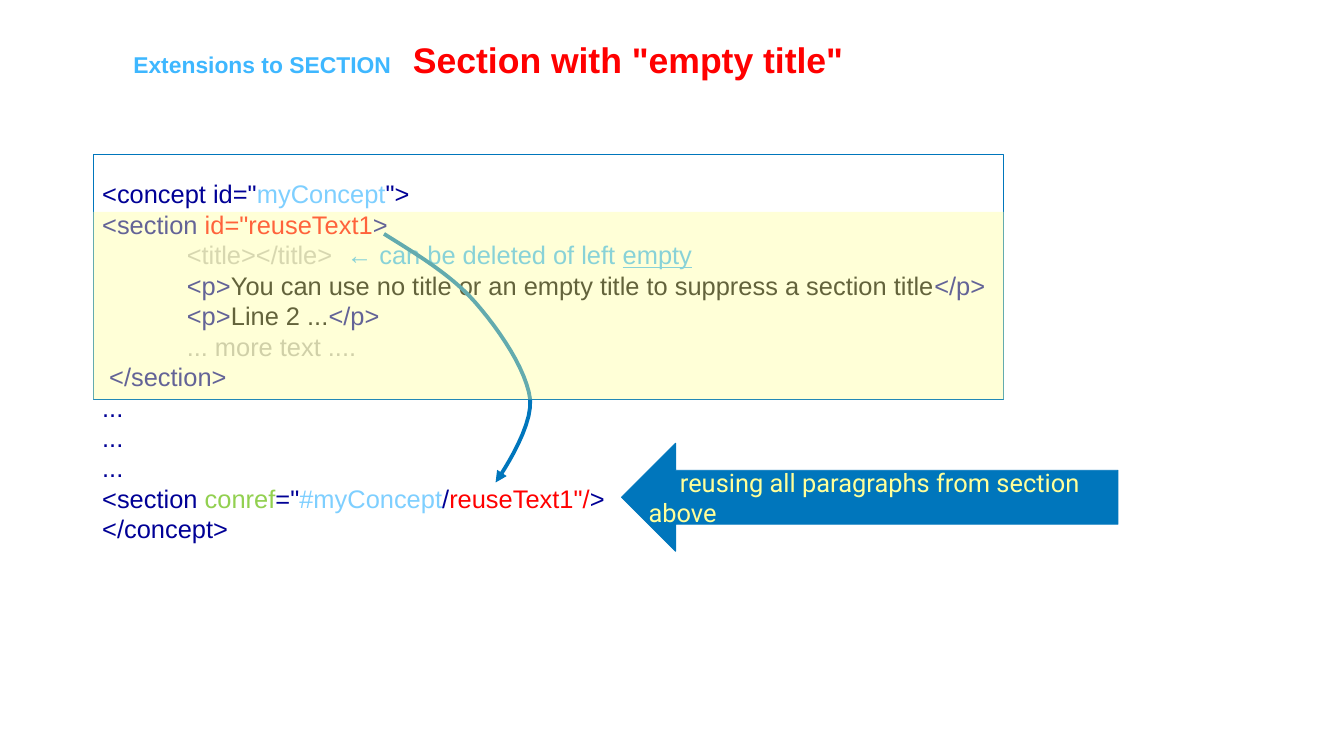
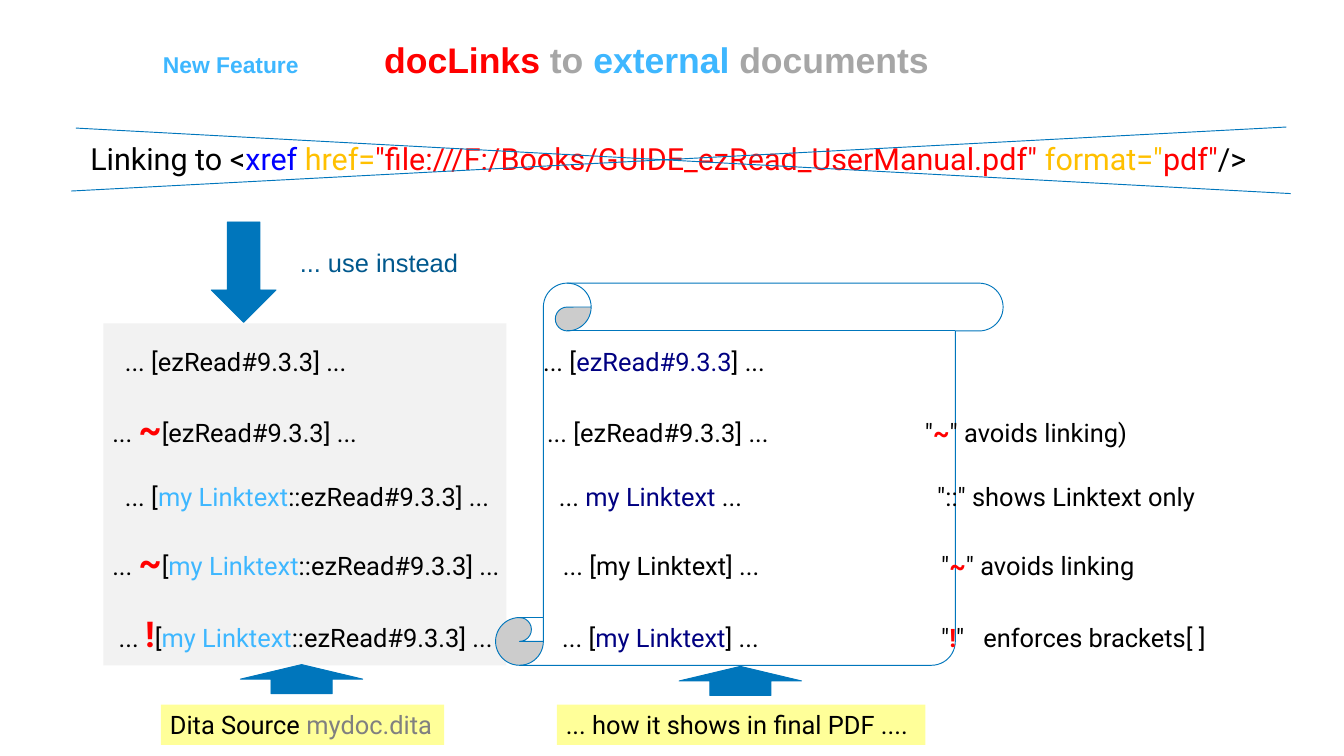
from dataclasses import dataclass

from lxml.etree import SubElement
from pptx import Presentation
from pptx.dml.color import RGBColor
from pptx.enum.shapes import MSO_CONNECTOR, MSO_SHAPE
from pptx.enum.text import MSO_ANCHOR, MSO_AUTO_SIZE, PP_ALIGN
from pptx.oxml.ns import qn
from pptx.util import Cm, Pt


@dataclass(frozen=True)
class Theme:
    blue: str = "0076BC"
    sky: str = "3EB7FF"
    pale_sky: str = "7ECFFF"
    deep_blue: str = "00588D"
    navy: str = "000096"
    link: str = "000081"
    element: str = "0000FF"
    red: str = "FF0000"
    gold: str = "FFC000"
    green: str = "92D050"
    yellow: str = "FFFF99"
    black: str = "000000"
    white: str = "FFFFFF"
    panel: str = "F2F2F2"
    title_gray: str = "A6A6A6"
    dark_gray: str = "808080"
    faint: str = "BFBFBF"
    faded: str = "B3B3B3"
    sans: str = "Arial"
    roboto: str = "Roboto"
    kicker: int = 18
    body: int = 20
    large: int = 24
    title: int = 28
    hairline: float = 0.75
    curve: int = 3


THEME = Theme()


@dataclass(frozen=True)
class Box:
    """A rectangle in centimetres."""
    left: float
    top: float
    width: float
    height: float

    def inner(self, left, top, width, height):
        return Box(self.left + left, self.top + top, width, height)

    def point(self, x, y):
        return Cm(self.left + x), Cm(self.top + y)

    @property
    def lengths(self):
        return [Cm(value) for value in (self.left, self.top, self.width, self.height)]


@dataclass(frozen=True)
class Piece:
    text: str
    color: str = THEME.black
    size: int = THEME.body
    bold: bool = False
    underline: bool = False


def rgb(color):
    return RGBColor.from_string(color)


def add_pieces(paragraph, pieces, font):
    for piece in pieces:
        run = paragraph.add_run()
        run.text = piece.text
        run.font.name = font
        run.font.size = Pt(piece.size)
        run.font.bold = piece.bold
        run.font.underline = piece.underline
        run.font.color.rgb = rgb(piece.color)


def add_tab_stops(paragraph, stops):
    tab_list = SubElement(paragraph._p.get_or_add_pPr(), qn("a:tabLst"))
    for stop in stops:
        SubElement(tab_list, qn("a:tab"), pos=str(Cm(stop)), algn="l")


def next_paragraph(frame, index):
    return frame.add_paragraph() if index else frame.paragraphs[0]


def add_text(slide, box, lines, font, line_height=None):
    frame = slide.shapes.add_textbox(*box.lengths).text_frame
    frame.word_wrap = True
    for index, pieces in enumerate(lines):
        paragraph = next_paragraph(frame, index)
        if line_height:
            paragraph.line_spacing = Pt(line_height)
        add_pieces(paragraph, pieces, font)


def style_line(line, width=THEME.hairline):
    line.color.rgb = rgb(THEME.blue)
    line.width = Pt(width)


def add_panel(slide, kind, box, fill=None, outlined=False):
    shape = slide.shapes.add_shape(kind, *box.lengths)
    shape.shadow.inherit = False
    if fill:
        shape.fill.solid()
        shape.fill.fore_color.rgb = rgb(fill)
    else:
        shape.fill.background()
    if outlined:
        style_line(shape.line)
    else:
        shape.line.fill.background()
    return shape


def add_block_arrow(slide, kind, box):
    return add_panel(slide, kind, box, THEME.blue, outlined=True)


def add_title_slide(presentation, box, kicker, headline, headline_start):
    """Add a slide whose title is a kicker, a tab and a headline."""
    slide = presentation.slides.add_slide(presentation.slide_layouts[5])
    title = slide.shapes.title
    title.left, title.top, title.width, title.height = box.lengths
    frame = title.text_frame
    frame.auto_size = MSO_AUTO_SIZE.NONE
    frame.vertical_anchor = MSO_ANCHOR.BOTTOM
    frame.margin_bottom = Cm(0.25)
    paragraph = frame.paragraphs[0]
    add_tab_stops(paragraph, [headline_start])
    paragraph.alignment = PP_ALIGN.LEFT
    kicker_pieces = [Piece(kicker + "\t", THEME.sky, THEME.kicker, True)]
    headline_pieces = [Piece(text, color, THEME.title, True) for text, color in headline]
    add_pieces(paragraph, kicker_pieces + headline_pieces, THEME.sans)
    return slide


def bezier(start, first, second, end, steps=12):
    for step in range(1, steps + 1):
        t = step / steps
        weights = ((1 - t) ** 3, 3 * t * (1 - t) ** 2, 3 * t * t * (1 - t), t ** 3)
        yield tuple(sum(weight * point[axis] for weight, point
                        in zip(weights, (start, first, second, end))) for axis in (0, 1))


def add_reuse_curve(slide, box):
    """Draw the curved arrow from the section id to its reuse."""
    knots = [(0, 0), (0.94, 0.59), (1.88, 1.15), (2.54, 1.91), (3.22, 2.69),
             (3.96, 3.79), (4.06, 4.6), (4.14, 5.44), (3.1, 6.91), (3.1, 6.91)]
    points = [point for index in range(0, len(knots) - 1, 3)
              for point in bezier(*knots[index:index + 4])]
    builder = slide.shapes.build_freeform(*box.point(*knots[0]))
    builder.add_line_segments([box.point(*point) for point in points], close=False)
    curve = builder.convert_to_shape()
    curve.shadow.inherit = False
    curve.fill.background()
    style_line(curve.line, THEME.curve)
    SubElement(curve.line._get_or_add_ln(), qn("a:tailEnd"), type="triangle")


def add_code_listing(slide, box):
    indent = " " * 12
    navy, pale = THEME.navy, THEME.pale_sky
    lines = [
        [Piece('<concept id="', navy), Piece("myConcept", pale), Piece('">', navy)],
        [Piece("<section ", navy), Piece('id="reuseText1', THEME.red), Piece(">", navy)],
        [Piece(indent + "<title></title>  ", THEME.faint),
         Piece("← can be deleted of left ", THEME.sky),
         Piece("empty", THEME.sky, underline=True)],
        [Piece(indent + "<p>", navy),
         Piece("You can use no title or an empty title to suppress a section title"),
         Piece("</p>", navy)],
        [Piece(indent + "<p>", navy), Piece("Line 2 ..."), Piece("</p>", navy)],
        [Piece(indent + "... more text ....", THEME.faded)],
        [Piece(" </section>", navy)],
        *[[Piece("...", navy)]] * 3,
        [Piece("<section ", navy), Piece("conref", THEME.green), Piece('="', navy),
         Piece("#myConcept", pale), Piece("/", navy),
         Piece('reuseText1"/', THEME.red), Piece(">", navy)],
        [Piece("</concept>", navy)],
    ]
    add_text(slide, box, lines, THEME.sans, line_height=24)


def add_reuse_callout(slide, box):
    arrow = add_block_arrow(slide, MSO_SHAPE.LEFT_ARROW, box)
    frame = arrow.text_frame
    frame.word_wrap = True
    frame.vertical_anchor = MSO_ANCHOR.MIDDLE
    frame.margin_left = frame.margin_right = frame.margin_top = frame.margin_bottom = 0
    paragraph = frame.paragraphs[0]
    paragraph._p.get_or_add_pPr().set("indent", str(Cm(0.87)))
    paragraph.alignment = PP_ALIGN.LEFT
    paragraph.line_spacing = Pt(24)
    add_pieces(paragraph, [Piece("reusing all paragraphs from section above", THEME.yellow)],
               THEME.roboto)


def add_section_highlight(slide, box):
    add_panel(slide, MSO_SHAPE.RECTANGLE, box, outlined=True)
    tint = add_panel(slide, MSO_SHAPE.RECTANGLE, box.inner(0, 1.6, box.width, 5.21), THEME.yellow)
    color = tint._element.spPr.find(qn("a:solidFill"))[0]
    SubElement(color, qn("a:alpha"), val="39000")


def add_struck_reference(slide, box):
    """Show the reference to avoid, crossed out by two lines."""
    red, gold = THEME.red, THEME.gold
    parts = [("Linking to <", THEME.black), ("xref ", THEME.element), ("href=", gold),
             ('"file:///F:/Books/GUIDE_ezRead_UserManual.pdf" ', red),
             ('format="', gold), ('pdf"', red), ("/>", THEME.black)]
    add_text(slide, box, [[Piece(text, color, THEME.large) for text, color in parts]],
             THEME.roboto)
    for start, end in (((33.6, 1.6), (-0.15, -0.22)), ((33.48, -0.25), (-0.28, 1.53))):
        line = slide.shapes.add_connector(MSO_CONNECTOR.STRAIGHT,
                                          *box.point(*start), *box.point(*end))
        style_line(line.line)
        SubElement(line._element.spPr, qn("a:effectLst"))


def add_use_instead(slide, box):
    add_block_arrow(slide, MSO_SHAPE.DOWN_ARROW, box.inner(0, 0, 1.8, 2.79))
    add_text(slide, box.inner(2.21, 0.56, 5.38, 1.12),
             [[Piece("... use instead", THEME.deep_blue)]], THEME.sans)


def add_link_examples(slide, box):
    """Set source, result and remark of each example on tab stops (cm)."""
    tilde, tilde_sign = (Piece("~", THEME.red, size, True) for size in (THEME.title, THEME.body))
    bang, bang_sign = (Piece("!", THEME.red, size, True) for size in (THEME.title, THEME.body))
    label, linked = (Piece("my Linktext", color) for color in (THEME.sky, THEME.link))
    dots, target, quote = Piece("... "), Piece("::ezRead#9.3.3] ..."), Piece('"')
    plain = Piece("[ezRead#9.3.3] ...")
    examples = [
        (0, (0.35, 11.97), [
            [dots, plain],
            [Piece("... ["), Piece("ezRead#9.3.3", THEME.link), Piece("] ...")]]),
        (33, (0, 12.08, 22.58), [
            [dots, tilde, plain], [dots, plain],
            [quote, tilde_sign, Piece('" avoids linking)')]]),
        (25, (0.35, 12.41, 22.92), [
            [Piece("... ["), label, target], [dots, linked, Piece(" ...")],
            [Piece('"::" shows Linktext only')]]),
        (32, (0, 12.52, 23.03), [
            [dots, tilde, Piece("["), label, target], [Piece("... [my Linktext] ...")],
            [quote, tilde_sign, Piece('" avoids linking')]]),
        (33, (0.18, 12.5, 23.03, 24.2), [
            [dots, bang, Piece("["), label, target],
            [Piece("... ["), linked, Piece("] ...")],
            [quote, bang_sign, quote], [Piece("enforces brackets[ ]")]]),
    ]
    frame = slide.shapes.add_textbox(*box.lengths).text_frame
    frame.word_wrap = True
    for index, (space_before, starts, cells) in enumerate(examples):
        paragraph = next_paragraph(frame, index)
        add_tab_stops(paragraph, [start for start in starts if start])
        paragraph.line_spacing = Pt(24)
        paragraph.space_before = Pt(space_before)
        for start, cell in zip(starts, cells):
            add_pieces(paragraph, ([Piece("\t")] if start else []) + cell, THEME.roboto)


def add_caption(slide, box, pieces, arrow_left, arrow_top):
    """Place a yellow label and the arrow pointing up from it."""
    label = add_panel(slide, MSO_SHAPE.RECTANGLE, box, THEME.yellow)
    label.text_frame.word_wrap = False
    label.text_frame.auto_size = MSO_AUTO_SIZE.SHAPE_TO_FIT_TEXT
    paragraph = label.text_frame.paragraphs[0]
    paragraph.alignment = PP_ALIGN.LEFT
    add_pieces(paragraph, pieces, THEME.roboto)
    add_block_arrow(slide, MSO_SHAPE.UP_ARROW, box.inner(arrow_left, arrow_top, 3.4, 0.81))


def build_empty_title_slide(presentation):
    slide = add_title_slide(presentation, Box(3.45, 0.51, 31.6, 1.98), "Extensions to SECTION",
                            [('Section with "empty title"', THEME.red)], 7.77)
    add_code_listing(slide, Box(2.59, 4.83, 25.3, 10.52))
    add_reuse_callout(slide, Box(17.27, 12.32, 13.79, 3))
    add_reuse_curve(slide, Box(10.67, 6.5, 4.06, 6.91))
    add_section_highlight(slide, Box(2.59, 4.29, 25.3, 6.81))


def build_external_links_slide(presentation):
    headline = [("docLinks ", THEME.red), ("to ", THEME.title_gray),
                ("external", THEME.sky), (" documents", THEME.title_gray)]
    slide = add_title_slide(presentation, Box(4.27, 0.51, 30.81, 1.98),
                            "New Feature", headline, 6.15)
    add_panel(slide, MSO_SHAPE.RECTANGLE, Box(2.87, 8.99, 11.2, 9.5), THEME.panel)
    add_panel(slide, MSO_SHAPE.VERTICAL_SCROLL, Box(13.77, 7.87, 14.1, 10.62),
              THEME.white, outlined=True)
    add_link_examples(slide, Box(2.87, 9.5, 34.01, 8.97))
    add_struck_reference(slide, Box(2.26, 3.78, 33.15, 1.27))
    add_use_instead(slide, Box(5.87, 6.17, 7.59, 2.79))
    add_caption(slide, Box(4.47, 19.58, 7.87, 1.12),
                [Piece("Dita Source "), Piece("mydoc.dita", THEME.dark_gray)], 2.21, -1.11)
    add_caption(slide, Box(15.47, 19.58, 10.24, 1.12),
                [Piece("... how it shows in final PDF ....")], 3.4, -1.06)


def main():
    presentation = Presentation()
    presentation.slide_width, presentation.slide_height = Cm(37.34), Cm(21.01)
    build_empty_title_slide(presentation)
    build_external_links_slide(presentation)
    presentation.save("out.pptx")


if __name__ == "__main__":
    main()
